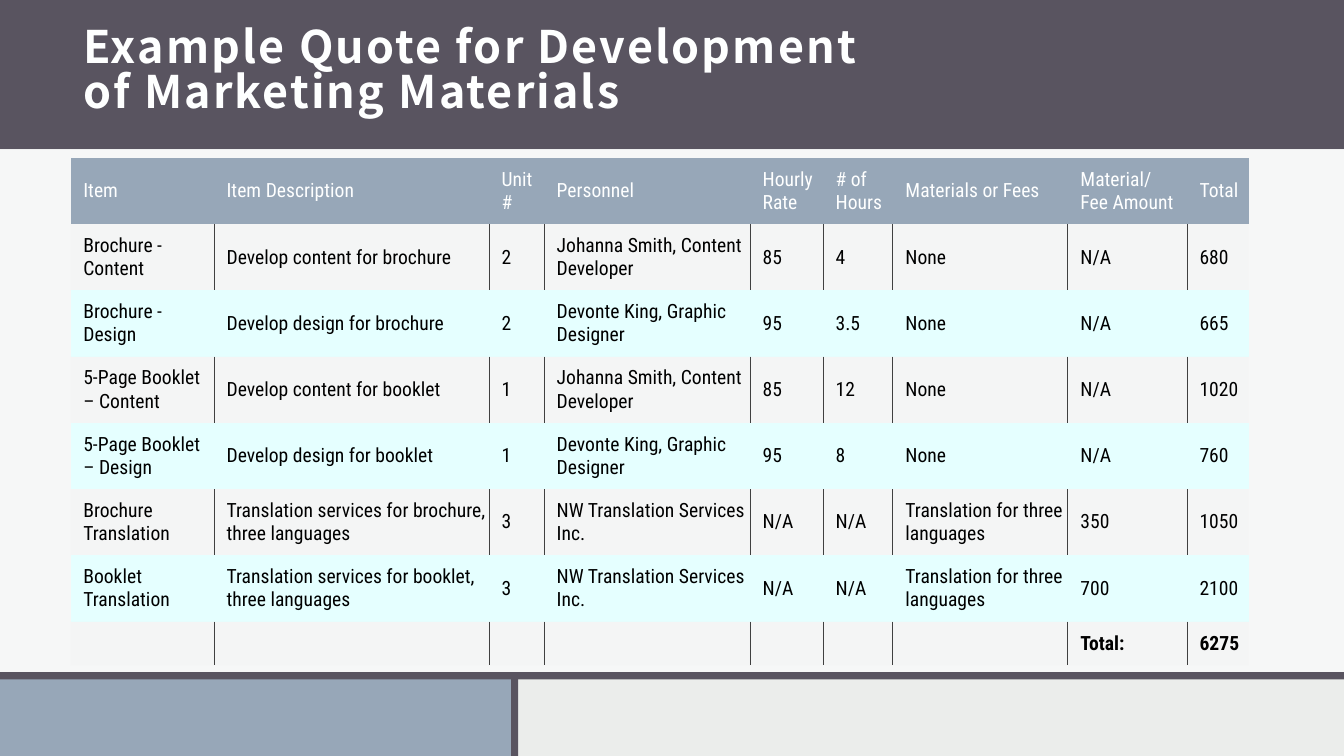
from copy import deepcopy

from lxml.etree import SubElement
from pptx import Presentation
from pptx.dml.color import RGBColor
from pptx.enum.shapes import MSO_SHAPE
from pptx.enum.text import MSO_ANCHOR, MSO_AUTO_SIZE, PP_ALIGN
from pptx.oxml.ns import qn
from pptx.util import Cm, Pt

COLORS = {
    "slate": "595460",
    "steel": "97A7B8",
    "mist": "EBEDEB",
    "white": "FEFFFF",
    "aqua": "E5FFFF",
    "grey": "F2F2F2",
    "rule": "404040",
    "black": "000000",
}
HEADING_FONT = "Noto Sans CJK JP"
BODY_FONT = "Roboto Condensed"
NO_GRID_STYLE = "{2D5ABB26-0587-4C30-8999-92F81FD0307C}"

SLIDE_WIDTH, SLIDE_HEIGHT = 33.87, 19.05
BANDS = [  # left, top, width, height, color, opacity in percent
    (0, 0, SLIDE_WIDTH, 3.76, "slate", 100),
    (0, 3.76, SLIDE_WIDTH, 13.18, "white", 60),
    (0, 16.97, 12.93, 2.08, "steel", 100),
    (0, 16.94, SLIDE_WIDTH, 0.18, "slate", 100),
    (12.88, 16.99, 0.18, 2.06, "slate", 100),
]

COLUMN_WIDTHS = [3.61, 6.93, 1.39, 5.19, 1.84, 1.76, 4.41, 3, 1.56]
ROW_HEIGHT, TOTAL_ROW_HEIGHT = 1.66, 1.1
QUOTE = [
    ["Item", "Item Description", "Unit #", "Personnel", "Hourly Rate", "# of Hours",
     "Materials or Fees", "Material/\nFee Amount", "Total"],
    ["Brochure - Content", "Develop content for brochure", "2",
     "Johanna Smith, Content Developer", "85", "4", "None", "N/A", "680"],
    ["Brochure - Design", "Develop design for brochure", "2",
     "Devonte King, Graphic Designer", "95", "3.5", "None", "N/A", "665"],
    ["5-Page Booklet – Content", "Develop content for booklet", "1",
     "Johanna Smith, Content Developer", "85", "12", "None", "N/A", "1020"],
    ["5-Page Booklet – Design", "Develop design for booklet", "1",
     "Devonte King, Graphic Designer", "95", "8", "None", "N/A", "760"],
    ["Brochure Translation", "Translation services for brochure, three languages", "3",
     "NW Translation Services Inc.", "N/A", "N/A", "Translation for three languages",
     "350", "1050"],
    ["Booklet Translation", "Translation services for booklet, three languages", "3",
     "NW Translation Services Inc.", "N/A", "N/A", "Translation for three languages",
     "700", "2100"],
    ["", "", "", "", "", "", "", "Total:", "6275"],
]


def rgb(color):
    return RGBColor.from_string(COLORS[color])


def fill_solid(fill, color, opacity, parent):
    """Fill with a color; parent is the XML element that holds the fill."""
    fill.solid()
    fill.fore_color.rgb = rgb(color)
    if opacity < 100:
        srgb = parent.find(qn("a:solidFill")).find(qn("a:srgbClr"))
        SubElement(srgb, qn("a:alpha"), val=str(opacity * 1000))


def write_text(frame, text, *, size, font, color, bold=False, spacing=0, line_spacing=None):
    """Write one paragraph; a newline in the text is a line break."""
    paragraph = frame.paragraphs[0]
    paragraph.text = text
    paragraph.alignment = PP_ALIGN.LEFT
    paragraph.line_spacing = line_spacing
    for run in paragraph.runs:
        run.font.size = Pt(size)
        run.font.name = font
        run.font.bold = bold
        run.font.color.rgb = rgb(color)
        if spacing:
            run.font._element.set("spc", str(int(spacing * 100)))
    for line_break in paragraph._p.findall(qn("a:br")):
        line_break.append(deepcopy(paragraph.runs[0].font._element))
    if not text:
        SubElement(paragraph._p, qn("a:endParaRPr"), sz=str(size * 100))


def add_band(slide, left, top, width, height, color, opacity):
    band = slide.shapes.add_shape(
        MSO_SHAPE.RECTANGLE, Cm(left), Cm(top), Cm(width), Cm(height))
    band.shadow.inherit = False
    band.line.fill.background()
    fill_solid(band.fill, color, opacity, band._element.spPr)


def set_title(slide, text):
    title = slide.shapes.title
    title.left, title.top, title.width, title.height = Cm(1.8), Cm(0.74), Cm(30.28), Cm(3.25)
    frame = title.text_frame
    frame.auto_size = MSO_AUTO_SIZE.NONE
    frame.word_wrap = True
    frame.vertical_anchor = MSO_ANCHOR.MIDDLE
    frame.margin_left = frame.margin_right = Cm(0.3)
    frame.margin_top, frame.margin_bottom = Cm(0), Cm(1.07)
    write_text(frame, text, size=32, font=HEADING_FONT, color="white", bold=True,
               spacing=1.5, line_spacing=0.84)
    slide.shapes._spTree.append(title._element)  # in front of the bands


def add_side_borders(cell, sides):
    properties = cell._tc.get_or_add_tcPr()
    for side in sides:
        line = SubElement(properties, qn(f"a:ln{side}"), w=str(Pt(0.5)))
        solid = SubElement(line, qn("a:solidFill"))
        SubElement(solid, qn("a:srgbClr"), val=COLORS["rule"])


def format_cell(cell, text, row, column):
    is_header, is_total = row == 0, row == len(QUOTE) - 1
    cell.vertical_anchor = MSO_ANCHOR.MIDDLE
    cell.margin_left, cell.margin_right = Cm(0.32), Cm(0.02)
    cell.margin_top = cell.margin_bottom = Cm(0.25)
    write_text(cell.text_frame, text, size=14, font=BODY_FONT,
               color="white" if is_header else "black", bold=is_total)
    color, opacity = "aqua", 100
    if is_header:
        color = "steel"
    elif row % 2:
        color, opacity = "grey", 30
        last = len(COLUMN_WIDTHS) - 1
        add_side_borders(cell, ("L" if column > 0 else "") + ("R" if column < last else ""))
    fill_solid(cell.fill, color, opacity, cell._tc.tcPr)


def add_quote_table(slide):
    heights = [ROW_HEIGHT] * (len(QUOTE) - 1) + [TOTAL_ROW_HEIGHT]
    table = slide.shapes.add_table(
        len(QUOTE), len(COLUMN_WIDTHS), Cm(1.78), Cm(3.98),
        Cm(sum(COLUMN_WIDTHS)), Cm(sum(heights))).table
    table.horz_banding = False
    table._tbl.tblPr.find(qn("a:tableStyleId")).text = NO_GRID_STYLE
    for column, width in zip(table.columns, COLUMN_WIDTHS):
        column.width = Cm(width)
    for row, (height, texts) in enumerate(zip(heights, QUOTE)):
        table.rows[row].height = Cm(height)
        for column, text in enumerate(texts):
            format_cell(table.cell(row, column), text, row, column)


def main():
    presentation = Presentation()
    presentation.slide_width, presentation.slide_height = Cm(SLIDE_WIDTH), Cm(SLIDE_HEIGHT)
    slide = presentation.slides.add_slide(presentation.slide_layouts[5])
    slide.background.fill.solid()
    slide.background.fill.fore_color.rgb = rgb("mist")
    for band in BANDS:
        add_band(slide, *band)
    set_title(slide, "Example Quote for Development\nof Marketing Materials")
    add_quote_table(slide)
    presentation.save("out.pptx")


if __name__ == "__main__":
    main()
